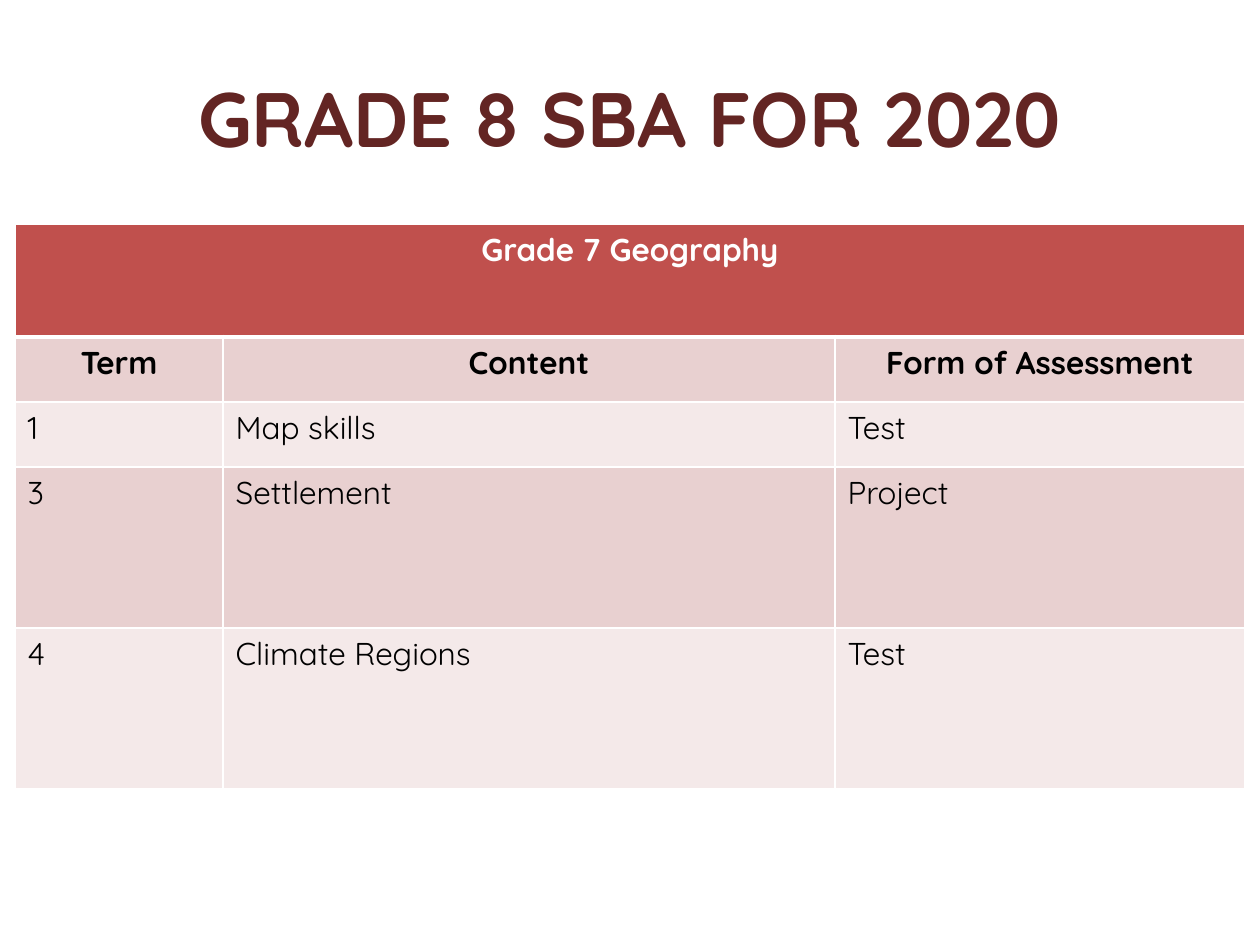
from lxml import etree
from pptx import Presentation
from pptx import util as u
from pptx.dml.color import RGBColor
from pptx.enum import text
from pptx.oxml import ns

FONT = "Quicksand"
WHITE, BLACK, MAROON, RED = "FFFFFF", "000000", "632523", "C0504D"
BANDS = ["F4E9E9", "E8D0D0"]
CENTER, LEFT = text.PP_ALIGN.CENTER, text.PP_ALIGN.LEFT
COLUMNS = [208, 612, 410]
ROWS = [113, 65, 65, 161, 161]
HEADING = "Grade 7 Geography"
ENTRIES = [
    ["Term", "Content", "Form of Assessment"],
    ["1", "Map skills", "Test"],
    ["3", "Settlement", "Project"],
    ["4", "Climate Regions", "Test"],
]


def px(length):
    return u.Emu(round(length * 914400 / 126))


def color(code):
    return RGBColor.from_string(code)


class Page:
    def __init__(self, deck):
        self.page = deck.slides.add_slide(deck.slide_layouts[6])

    def label(self, frame, words, size, code, bold, align):
        para = frame.paragraphs[0]
        para.alignment = align
        span = para.add_run()
        span.text = words
        style = {"name": FONT, "size": u.Pt(size), "bold": bold}
        for key, value in style.items():
            setattr(span.font, key, value)
        span.font.color.rgb = color(code)

    def title(self, words, left, top, width, height):
        box = self.page.shapes.add_textbox(px(left), px(top), px(width), px(height))
        frame = box.text_frame
        frame.word_wrap = True
        frame.vertical_anchor = text.MSO_ANCHOR.MIDDLE
        self.label(frame, words, 44, MAROON, True, CENTER)

    def borders(self, cell, widths):
        properties = cell._tc.get_or_add_tcPr()
        for side, width in widths.items():
            line = etree.SubElement(properties, ns.qn(f"a:ln{side}"), w=str(u.Pt(width)))
            fill = etree.SubElement(line, ns.qn("a:solidFill"))
            etree.SubElement(fill, ns.qn("a:srgbClr"), val=WHITE)

    def paint(self, cell, code, top=1, bottom=1):
        self.borders(cell, {"L": 1, "R": 1, "T": top, "B": bottom})
        cell.fill.solid()
        cell.fill.fore_color.rgb = color(code)

    def table(self, left, top):
        table = self.page.shapes.add_table(
            len(ROWS), len(COLUMNS), px(left), px(top), px(sum(COLUMNS)), px(sum(ROWS))
        ).table
        for column, width in zip(table.columns, COLUMNS):
            column.width = px(width)
        for row, height in zip(table.rows, ROWS):
            row.height = px(height)
        for index in range(len(COLUMNS)):
            self.paint(table.cell(0, index), RED, bottom=3)
        table.cell(0, 0).merge(table.cell(0, len(COLUMNS) - 1))
        self.label(table.cell(0, 0).text_frame, HEADING, 18, WHITE, True, CENTER)
        for number, entry in enumerate(ENTRIES, 1):
            first = number == 1
            for index, words in enumerate(entry):
                cell = table.cell(number, index)
                self.paint(cell, BANDS[number % 2], top=3 if first else 1)
                self.label(cell.text_frame, words, 18, BLACK, first, CENTER if first else LEFT)


def main():
    deck = Presentation()
    deck.slide_width, deck.slide_height = px(1260), px(945)
    page = Page(deck)
    page.title("GRADE 8 SBA FOR 2020", 63, 38, 1134, 158)
    page.table(15, 224)
    deck.save("out.pptx")


if __name__ == "__main__":
    main()
